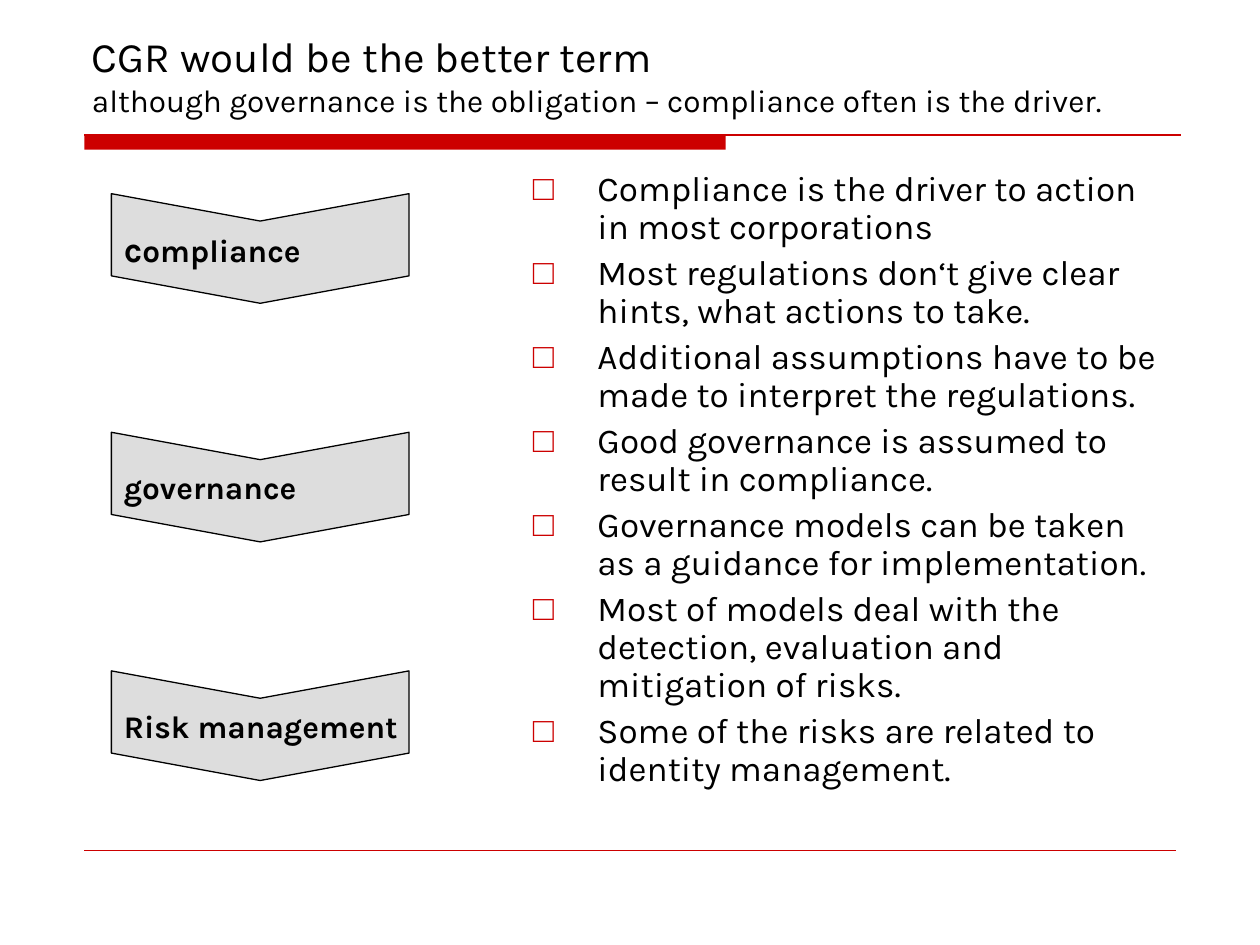
from lxml import etree
from pptx import Presentation
from pptx.dml.color import RGBColor
from pptx.enum import shapes, text
from pptx.oxml import ns
from pptx.util import Cm, Pt

RED = RGBColor(0xCC, 0x00, 0x00)
GREY = RGBColor(0xDD, 0xDD, 0xDD)
BLACK = RGBColor(0x00, 0x00, 0x00)
FONT = "Karla"

TITLE = "CGR would be the better term"
SUBTITLE = "although governance is the obligation – compliance often is the driver."
STATEMENTS = [
    "Compliance is the driver to action in most corporations",
    "Most regulations don‘t give clear hints, what actions to take.",
    "Additional assumptions have to be made to interpret the regulations.",
    "Good governance is assumed to result in compliance.",
    "Governance models can be taken as a guidance for implementation.",
    "Most of models deal with the detection, evaluation and mitigation of risks.",
    "Some of the risks are related to identity management.",
]
# Each step is a list of (text, size) runs
STEPS = [
    [("c", 20), ("ompliance", 18)],
    [("governance", 18)],
    [("Risk management", 18)],
]


def style_font(font, size):
    font.name = FONT
    font.size = Pt(size)
    font.color.rgb = BLACK


def add_bullet(paragraph, character, indent):
    """Give the paragraph a red bullet with a hanging indent."""
    properties = paragraph._p.get_or_add_pPr()
    properties.set("marL", str(indent))
    properties.set("indent", str(-indent))
    colour = etree.SubElement(properties, ns.qn("a:buClr"))
    etree.SubElement(colour, ns.qn("a:srgbClr"), val=str(RED))
    etree.SubElement(properties, ns.qn("a:buChar"), char=character)


presentation = Presentation()
presentation.slide_width = Cm(25.4)
presentation.slide_height = Cm(19.05)
slide = presentation.slides.add_slide(presentation.slide_layouts[1])

# Red bar and rules
bar = slide.shapes.add_shape(
    shapes.MSO_SHAPE.RECTANGLE, Cm(1.7), Cm(2.72), Cm(12.93), Cm(0.3))
bar.shadow.inherit = False
bar.fill.solid()
bar.fill.fore_color.rgb = RED
bar.line.fill.background()

for right, top, width in [(23.8, 2.72, 0.75), (23.7, 17.15, 0.25)]:
    rule = slide.shapes.add_connector(
        shapes.MSO_CONNECTOR.STRAIGHT, Cm(1.7), Cm(top), Cm(right), Cm(top))
    rule.line.color.rgb = RED
    rule.line.width = Pt(width)
    etree.SubElement(rule._element.spPr, ns.qn("a:effectLst"))

# Title with a smaller second line
title = slide.shapes.title
title.left, title.top, title.width, title.height = Cm(1.6), Cm(0.84), Cm(22.23), Cm(1.68)
title.text_frame.auto_size = text.MSO_AUTO_SIZE.NONE
title.text_frame.vertical_anchor = text.MSO_ANCHOR.BOTTOM
paragraph = title.text_frame.paragraphs[0]
paragraph.alignment = text.PP_ALIGN.LEFT
run = paragraph.add_run()
run.text = TITLE
style_font(run.font, 24)
paragraph.add_line_break()
run = paragraph.add_run()
run.text = SUBTITLE
style_font(run.font, 18)

# Statements
body = slide.placeholders[1]
body.left, body.top, body.width, body.height = Cm(10.49), Cm(3.33), Cm(13.31), Cm(13.39)
body.text_frame.auto_size = text.MSO_AUTO_SIZE.NONE
body.text_frame.text = "\n".join(STATEMENTS)
for paragraph in body.text_frame.paragraphs:
    paragraph.line_spacing = 0.9
    paragraph.space_before = Pt(4.8)
    style_font(paragraph.font, 20)
    add_bullet(paragraph, "□", Cm(1.3))

# Chevrons pointing down, with upright text
for index, runs in enumerate(STEPS):
    chevron = slide.shapes.add_shape(
        shapes.MSO_SHAPE.CHEVRON, Cm(4.14), Cm(2.01 + 4.81 * index), Cm(2.21), Cm(6))
    chevron.rotation = 90
    chevron.adjustments[0] = 0.25
    chevron.shadow.inherit = False
    chevron.fill.solid()
    chevron.fill.fore_color.rgb = GREY
    chevron.line.color.rgb = BLACK
    chevron.line.width = Pt(0.75)
    frame = chevron.text_frame
    frame.word_wrap = False
    frame.vertical_anchor = text.MSO_ANCHOR.MIDDLE
    frame._txBody.bodyPr.set("vert", "eaVert")
    frame._txBody.bodyPr.set("rot", "10800000")
    paragraph = frame.paragraphs[0]
    paragraph.alignment = text.PP_ALIGN.CENTER
    for words, size in runs:
        run = paragraph.add_run()
        run.text = words
        style_font(run.font, size)
        run.font.bold = True

presentation.save("out.pptx")
